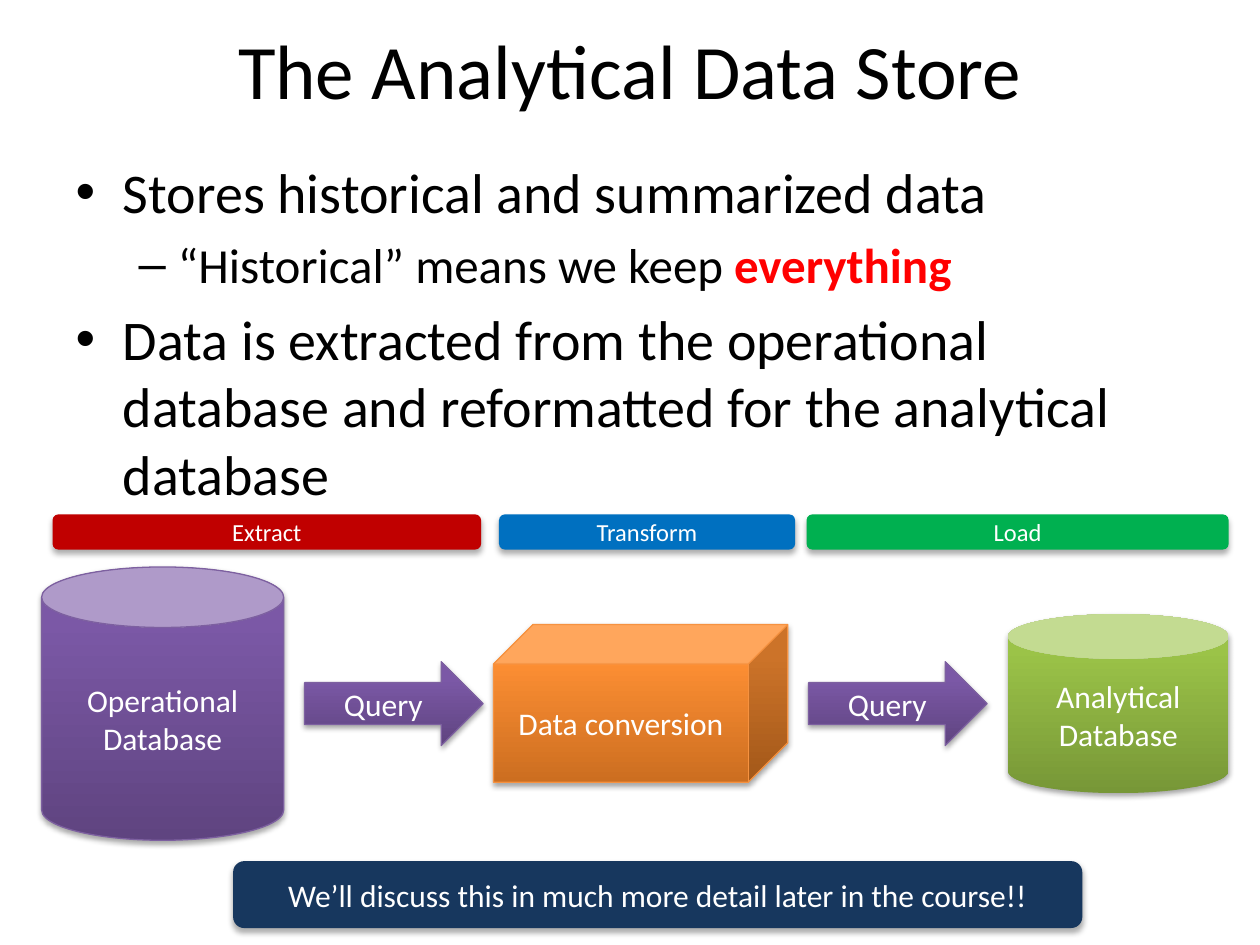
from dataclasses import dataclass

from lxml import etree
from pptx import Presentation
from pptx.dml.color import RGBColor
from pptx.enum.shapes import MSO_SHAPE
from pptx.enum.text import MSO_ANCHOR, MSO_AUTO_SIZE, PP_ALIGN
from pptx.oxml.ns import qn
from pptx.util import Cm, Pt

CAN = MSO_SHAPE.CAN
ARROW = MSO_SHAPE.RIGHT_ARROW
CUBE = MSO_SHAPE.CUBE
ROUND = MSO_SHAPE.ROUNDED_RECTANGLE
MIDDLE = MSO_ANCHOR.MIDDLE
TOP = MSO_ANCHOR.TOP
CENTER = PP_ALIGN.CENTER
FIXED = MSO_AUTO_SIZE.NONE


@dataclass(frozen=True)
class Theme:
    font: str = "Calibri"
    title: int = 44
    body: tuple = (32, 28)
    label: int = 18
    stage: int = 14
    ink: str = "000000"
    paper: str = "FFFFFF"
    alert: str = "FF0000"
    red: str = "C00000"
    blue: str = "0070C0"
    green: str = "00B050"
    navy: str = "17375E"
    violet: tuple = ("5F4480", "7B58A6", "7C57A8")
    lime: tuple = ("779737", "9BC348", "9DC746")
    orange: tuple = ("CC6E20", "FF9034", "FF9136")
    violet_edge: str = "7D60A0"
    orange_edge: str = "F69240"
    stops: tuple = (0, 80, 100)
    deep: tuple = (35, 3.15, 1.81)
    soft: tuple = (32, 3.5, 2.2)


THEME = Theme()


def write(para, text, size=THEME.label, color=THEME.ink, bold=False, align=None):
    run = para.add_run()
    run.text = text
    run.font.name = THEME.font
    run.font.size = Pt(size)
    run.font.bold = bold
    run.font.color.rgb = RGBColor.from_string(color)
    if align is not None:
        para.alignment = align


def place(shape, box):
    shape.left, shape.top, shape.width, shape.height = (Cm(n) for n in box)


def tint(parent, color, alpha=100):
    node = etree.SubElement(parent, qn("a:srgbClr"), val=color)
    if alpha < 100:
        etree.SubElement(node, qn("a:alpha"), val=str(alpha * 1000))


def shade(shape, colors):
    shape.fill.gradient()
    shape.fill.gradient_angle = 90
    stops = shape.element.spPr.find(qn("a:gradFill")).find(qn("a:gsLst"))
    for old in list(stops):
        stops.remove(old)
    for pos, color in zip(THEME.stops, colors):
        tint(etree.SubElement(stops, qn("a:gs"), pos=str(pos * 1000)), color)


def cast(shape, alpha, blur, dist):
    shape.shadow.inherit = False
    effects = shape.element.spPr.find(qn("a:effectLst"))
    shadow = etree.SubElement(
        effects, qn("a:outerShdw"), blurRad=str(Pt(blur)), dist=str(Pt(dist)),
        dir="5400000", rotWithShape="0")
    tint(shadow, THEME.ink, alpha)


def add_block(slide, kind, box, text, fill, edge=None, size=THEME.label):
    shape = slide.shapes.add_shape(kind, *(Cm(n) for n in box))
    if isinstance(fill, tuple):
        shade(shape, fill)
        cast(shape, *THEME.deep)
    else:
        shape.fill.solid()
        shape.fill.fore_color.rgb = RGBColor.from_string(fill)
        cast(shape, *THEME.soft)
    if edge:
        shape.line.width = Pt(0.75)
        shape.line.color.rgb = RGBColor.from_string(edge)
    else:
        shape.line.fill.background()
    frame = shape.text_frame
    frame.word_wrap = True
    frame.vertical_anchor = MIDDLE
    write(frame.paragraphs[0], text, size=size, color=THEME.paper, align=CENTER)


def add_title(slide, text):
    title = slide.shapes.title
    place(title, (1.27, -0.21, 22.86, 3.18))
    title.text_frame.auto_size = FIXED
    title.text_frame.vertical_anchor = MIDDLE
    write(title.text_frame.paragraphs[0], text, size=THEME.title, align=CENTER)


def add_list(slide, items):
    body = slide.placeholders[1]
    place(body, (1.27, 3.05, 22.86, 7.32))
    frame = body.text_frame
    frame.auto_size = FIXED
    frame.vertical_anchor = TOP
    for i, (level, parts) in enumerate(items):
        para = frame.add_paragraph() if i else frame.paragraphs[0]
        para.level = level
        for text, style in parts:
            write(para, text, size=THEME.body[level], **style)


def add_stages(slide):
    stages = (
        ("Extract", 1.06, 8.64, THEME.red),
        ("Transform", 10.06, 5.97, THEME.blue),
        ("Load", 16.26, 8.51, THEME.green),
    )
    for text, left, width, color in stages:
        add_block(slide, ROUND, (left, 10.37, width, 0.71), text, color,
                  size=THEME.stage)


def add_flow(slide):
    add_block(slide, CAN, (0.84, 11.43, 4.88, 5.51), "Operational Database",
              THEME.violet, THEME.violet_edge)
    add_block(slide, CAN, (20.32, 12.38, 4.45, 3.61), "Analytical Database",
              THEME.lime)
    add_block(slide, CUBE, (9.95, 12.59, 5.93, 3.18), "Data conversion",
              THEME.orange, THEME.orange_edge)
    for left in (6.14, 16.3):
        add_block(slide, ARROW, (left, 13.34, 3.6, 1.69), "Query",
                  THEME.violet, THEME.violet_edge)


def main():
    deck = Presentation()
    deck.slide_width, deck.slide_height = Cm(25.4), Cm(19.05)
    slide = deck.slides.add_slide(deck.slide_layouts[1])
    add_title(slide, "The Analytical Data Store")
    add_list(slide, (
        (0, [("Stores historical and summarized data", {})]),
        (1, [("“Historical” means we keep ", {}),
             ("everything", {"color": THEME.alert, "bold": True})]),
        (0, [("Data is extracted from the operational database and "
              "reformatted for the analytical database", {})]),
    ))
    add_flow(slide)
    add_stages(slide)
    add_block(slide, ROUND, (4.7, 17.36, 17.12, 1.35),
              "We’ll discuss this in much more detail later in the course!!",
              THEME.navy)
    deck.save("out.pptx")


if __name__ == "__main__":
    main()
